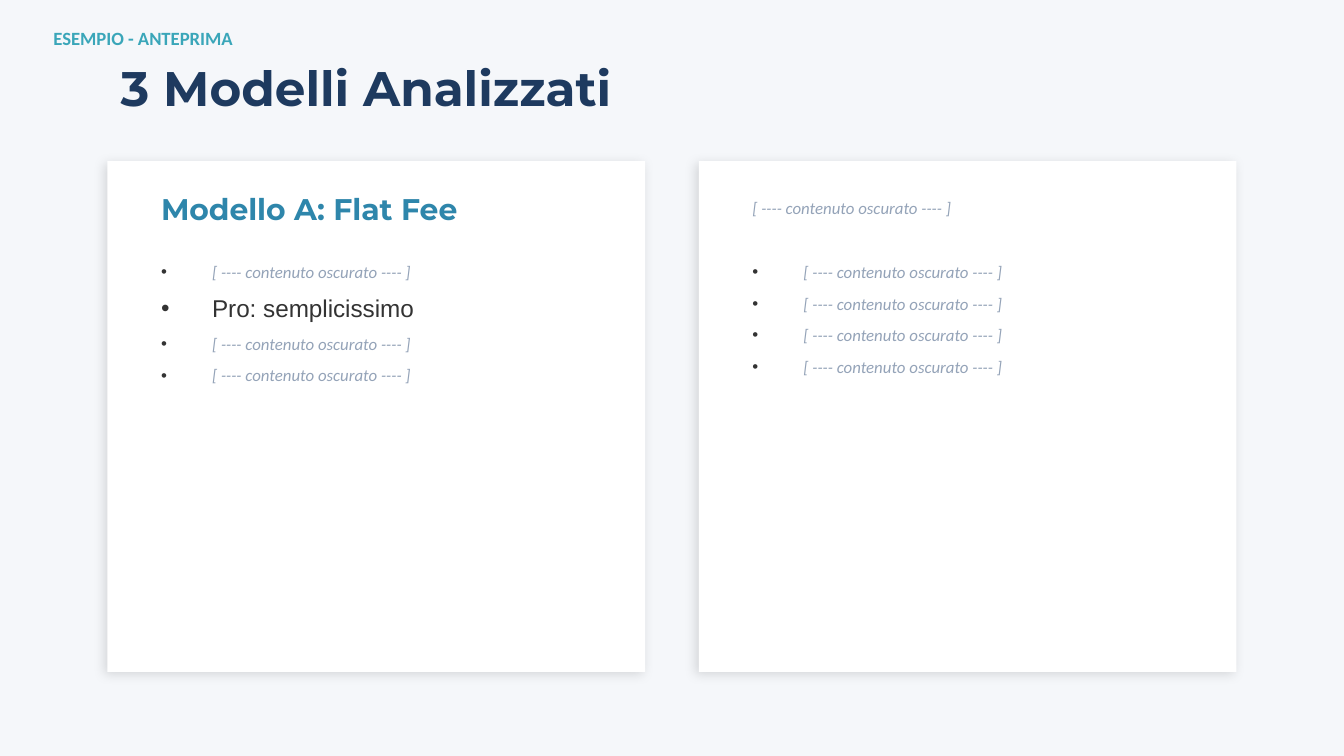
import pptx
import pptx.dml.color
import pptx.enum.shapes
import pptx.enum.text
import pptx.oxml
import pptx.oxml.ns
import pptx.util

# The slide is 100 grid cells wide; all positions and sizes are in cells.
COLUMNS = 100
NAVY, BLUE, TEAL = "1E3A5F", "2E86AB", "3AA6B9"
WHITE, PALE, DARK, MUTED = "FFFFFF", "F5F7FA", "333333", "94A3B8"
HIDDEN = "[ ---- contenuto oscurato ---- ]"
MIDDLE = pptx.enum.text.MSO_ANCHOR.MIDDLE
TOP = pptx.enum.text.MSO_ANCHOR.TOP

presentation = pptx.Presentation()
presentation.slide_width = pptx.util.Inches(10)
presentation.slide_height = presentation.slide_width * 9 // 16
cell = presentation.slide_width // COLUMNS
slide = presentation.slides.add_slide(presentation.slide_layouts[6])


def paint(color_fill, color):
    color_fill.solid()
    color_fill.fore_color.rgb = pptx.dml.color.RGBColor.from_string(color)


def add_text(lines, left, top, width, height, anchor=TOP, bullets=False, wrap=True):
    """Add a text box; each line is (text, font name, size, colour, bold, italic)."""
    box = slide.shapes.add_textbox(*(round(n * cell) for n in (left, top, width, height)))
    frame = box.text_frame
    frame.word_wrap = wrap
    frame.vertical_anchor = anchor
    if not wrap:
        frame.auto_size = pptx.enum.text.MSO_AUTO_SIZE.SHAPE_TO_FIT_TEXT
    for index, (text, name, size, color, bold, italic) in enumerate(lines):
        paragraph = frame.add_paragraph() if index else frame.paragraphs[0]
        if bullets:
            properties = paragraph._p.get_or_add_pPr()
            indent = pptx.util.Inches(0.38)
            properties.set("marL", str(indent))
            properties.set("indent", str(-indent))
            namespace = pptx.oxml.ns.nsdecls("a")
            for markup in (
                f'<a:buClr {namespace}><a:srgbClr val="{DARK}"/></a:buClr>',
                f'<a:buFont {namespace} typeface="Arial"/>',
                f'<a:buChar {namespace} char="•"/>',
            ):
                properties.append(pptx.oxml.parse_xml(markup))
            paragraph.space_after = pptx.util.Pt(6)
        run = paragraph.add_run()
        run.text = text
        font = run.font
        font.name, font.size = name, pptx.util.Pt(size)
        font.bold, font.italic = bold, italic
        paint(font.fill, color)


paint(slide.background.fill, PALE)
add_text([("3 Modelli Analizzati", "Montserrat", 26, NAVY, True, False)],
         8, 3, 84, 7, anchor=MIDDLE)

hidden = (HIDDEN, "Calibri", 9, MUTED, False, True)
heading = ("Modello A: Flat Fee", "Montserrat", 16, BLUE, True, False)
advantage = ("Pro: semplicissimo", "Arial", 13, DARK, False, False)
cards = [
    (heading, [hidden, advantage, hidden, hidden]),
    (hidden, [hidden] * 4),
]
card_width, gutter, padding = 40, 4, 3
for number, (card_title, points) in enumerate(cards):
    left = 8 + number * (card_width + gutter)
    card = slide.shapes.add_shape(
        pptx.enum.shapes.MSO_SHAPE.RECTANGLE,
        left * cell, 12 * cell, card_width * cell, 38 * cell)
    paint(card.fill, WHITE)
    card.line.fill.background()
    card.shadow.inherit = False
    effects = card._element.spPr.find(pptx.oxml.ns.qn("a:effectLst"))
    effects.append(pptx.oxml.parse_xml(
        f'<a:outerShdw {pptx.oxml.ns.nsdecls("a")} blurRad="{pptx.util.Pt(6)}" '
        f'dist="{pptx.util.Pt(2)}" dir="{135 * 60000}" algn="bl" rotWithShape="0">'
        '<a:srgbClr val="000000"><a:alpha val="12000"/></a:srgbClr></a:outerShdw>'))
    text_left, text_width = left + padding, card_width - 2 * padding
    add_text([card_title], text_left, 13, text_width, 5, anchor=MIDDLE)
    add_text(points, text_left, 19, text_width, 28, bullets=True)

add_text([("ESEMPIO - ANTEPRIMA", "Calibri", 10, TEAL, True, False)],
         3, 1.5, 30, 3.5, wrap=False)

presentation.save("out.pptx")
